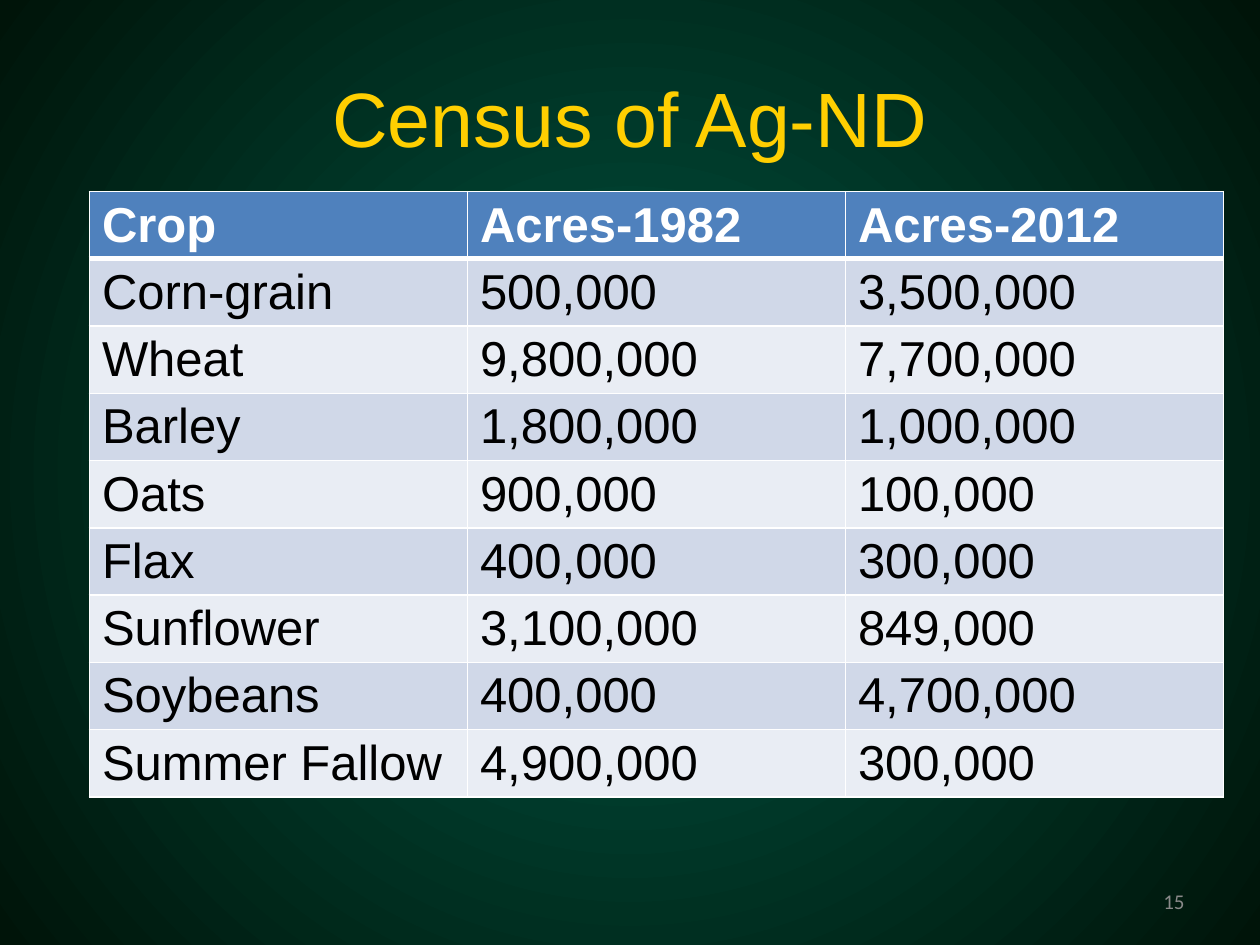
import pptx
import pptx.util
import pptx.dml.color
import pptx.enum.text
import pptx.oxml
import pptx.oxml.ns
from pptx.util import Inches

COLORS = {
    "center": "005643",
    "edge": "001409",
    "title": "FFCF01",
    "header": "4F81BD",
    "odd": "D0D8E8",
    "even": "E9EDF4",
    "white": "FFFFFF",
    "black": "000000",
    "number": "898989",
}

CROPS = [
    ("Crop", "Acres-1982", "Acres-2012"),
    ("Corn-grain", "500,000", "3,500,000"),
    ("Wheat", "9,800,000", "7,700,000"),
    ("Barley", "1,800,000", "1,000,000"),
    ("Oats", "900,000", "100,000"),
    ("Flax", "400,000", "300,000"),
    ("Sunflower", "3,100,000", "849,000"),
    ("Soybeans", "400,000", "4,700,000"),
    ("Summer Fallow", "4,900,000", "300,000"),
]


def color(name):
    return pptx.dml.color.RGBColor.from_string(COLORS[name])


def format_text(frame, size, font, color_name, bold=False, align=None):
    for para in frame.paragraphs:
        para.alignment = align
        for span in para.runs:
            span.font.size = pptx.util.Pt(size)
            span.font.name = font
            span.font.bold = bold
            span.font.color.rgb = color(color_name)


def paint_background(page):
    fill = page.background.fill
    fill.gradient()
    for stop, name in zip(fill.gradient_stops, ("center", "edge")):
        stop.color.rgb = color(name)
    gradient = page._element.find(".//" + pptx.oxml.ns.qn("a:gradFill"))
    gradient.remove(gradient.find(pptx.oxml.ns.qn("a:lin")))
    gradient.append(pptx.oxml.parse_xml(
        f'<a:path {pptx.oxml.ns.nsdecls("a")} path="circle">'
        '<a:fillToRect l="50000" t="50000" r="50000" b="50000"/></a:path>'
    ))


def place_title(page, left, top, width, height):
    title = page.shapes.title
    title.left, title.top, title.width, title.height = left, top, width, height
    frame = title.text_frame
    frame.text = "Census of Ag-ND"
    frame.vertical_anchor = pptx.enum.text.MSO_ANCHOR.MIDDLE
    format_text(frame, 44, "Arial", "title", align=pptx.enum.text.PP_ALIGN.CENTER)


def set_borders(cell, widths):
    properties = cell._tc.get_or_add_tcPr()
    for side, points in widths.items():
        properties.append(pptx.oxml.parse_xml(
            f'<a:ln{side} {pptx.oxml.ns.nsdecls("a")} w="{pptx.util.Pt(points)}">'
            f'<a:solidFill><a:srgbClr val="{COLORS["white"]}"/></a:solidFill></a:ln{side}>'
        ))


def place_crop_table(page, left, top, width, height):
    table = page.shapes.add_table(
        len(CROPS), len(CROPS[0]), left, top, width, height
    ).table
    for row, values in enumerate(CROPS):
        header = row == 0
        fill_name = "header" if header else "odd" if row % 2 else "even"
        widths = {"L": 1, "R": 1, "T": 3 if row == 1 else 1, "B": 3 if header else 1}
        for column, value in enumerate(values):
            cell = table.cell(row, column)
            cell.text_frame.text = value
            format_text(cell.text_frame, 28, "Arial",
                        "white" if header else "black", bold=header)
            set_borders(cell, widths)
            cell.fill.solid()
            cell.fill.fore_color.rgb = color(fill_name)


def place_page_number(page, left, top, width, height):
    box = page.shapes.add_textbox(left, top, width, height)
    frame = box.text_frame
    frame.word_wrap = True
    frame.vertical_anchor = pptx.enum.text.MSO_ANCHOR.MIDDLE
    frame.text = "15"
    format_text(frame, 12, "Calibri", "number", align=pptx.enum.text.PP_ALIGN.RIGHT)


def main():
    deck = pptx.Presentation()
    deck.slide_width, deck.slide_height = Inches(10), Inches(7.5)
    page = deck.slides.add_slide(deck.slide_layouts[5])
    paint_background(page)
    place_title(page, Inches(0.5), Inches(0.3), Inches(9), Inches(1.25))
    place_crop_table(page, Inches(0.71), Inches(1.52), Inches(9), Inches(4.8))
    place_page_number(page, Inches(7.17), Inches(6.95), Inches(2.33), Inches(0.4))
    deck.save("out.pptx")


if __name__ == "__main__":
    main()
